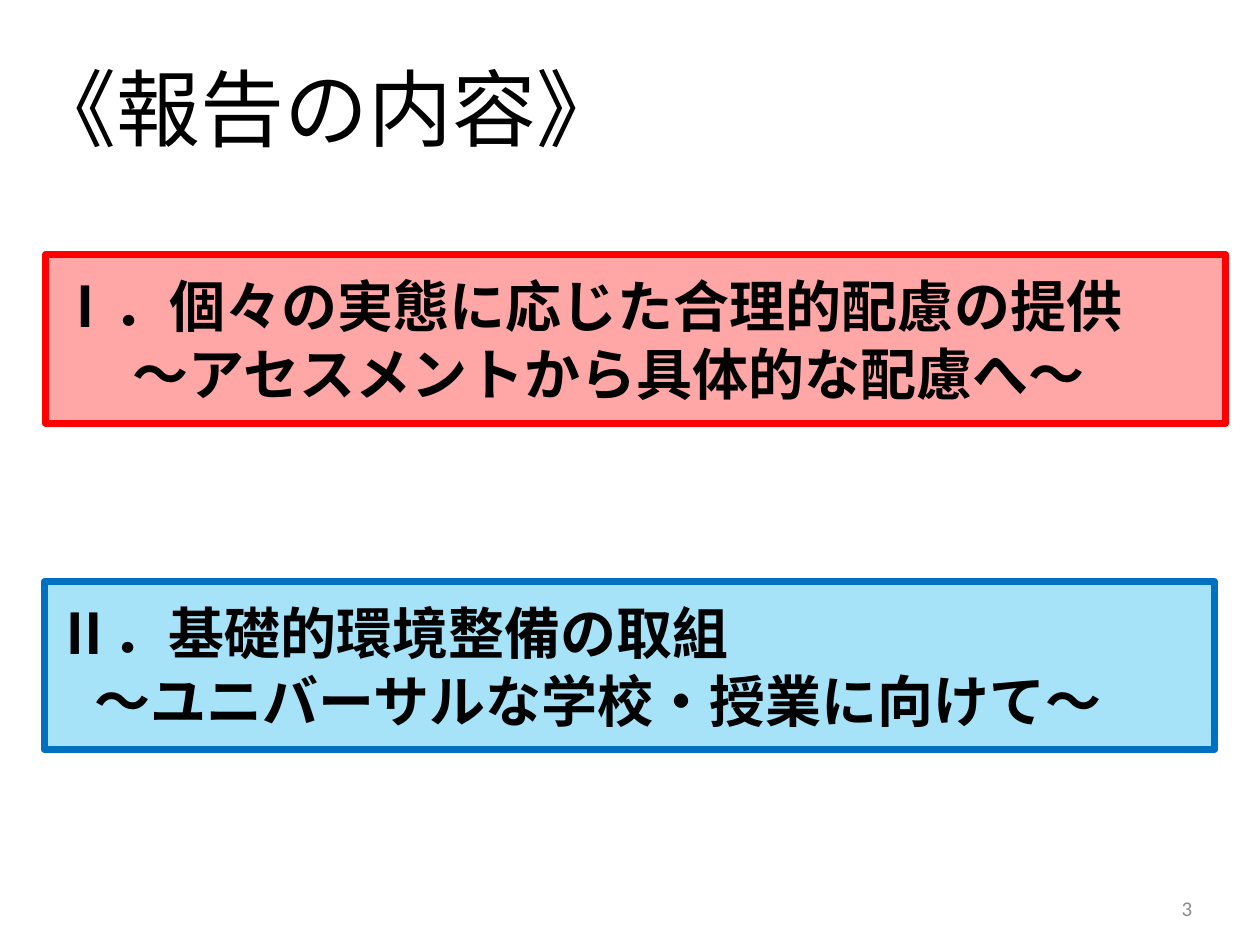
from dataclasses import dataclass

from lxml.etree import SubElement
from pptx import Presentation
from pptx.dml.color import RGBColor
from pptx.enum.shapes import MSO_SHAPE as Preset
from pptx.enum.text import MSO_ANCHOR as Anchor, PP_ALIGN as Align
from pptx.oxml.ns import qn
from pptx.util import Pt

COLORS = {
    "text": "000000",
    "number": "8C8C8C",
    "red": "FF0000",
    "sky": "00B0F0",
    "blue": "0070C0",
}
JAPANESE_FONT = "Noto Sans CJK JP"
LINE_HEIGHT = 1.215


@dataclass(frozen=True)
class Topic:
    heading: str
    subtitle: str
    subtitle_indent: float
    left: float
    top: float
    width: float
    height: float
    fill: str
    line: str


TOPICS = [
    Topic("Ⅱ．基礎的環境整備の取組", "～ユニバーサルな学校・授業に向けて～",
          21.5, 25.2, 332.6, 668.9, 95.8, "sky", "blue"),
    Topic("Ⅰ．個々の実態に応じた合理的配慮の提供", "～アセスメントから具体的な配慮へ～",
          43, 25.9, 145.4, 674.6, 96.5, "red", "red"),
]


def color(name: str) -> RGBColor:
    return RGBColor.from_string(COLORS[name])


def place(shape, left: float, top: float, width: float, height: float) -> None:
    shape.left, shape.top = Pt(left), Pt(top)
    shape.width, shape.height = Pt(width), Pt(height)


def format_japanese(paragraph, size: float, bold: bool = False) -> None:
    paragraph.alignment = Align.LEFT
    paragraph.line_spacing = Pt(round(size * LINE_HEIGHT, 1))
    font = paragraph.font
    font.name, font.size, font.bold = JAPANESE_FONT, Pt(size), bold
    font.color.rgb = color("text")
    for run in paragraph.runs:
        run.font.name = JAPANESE_FONT
        properties = run.font._element
        SubElement(properties, qn("a:ea"), typeface=JAPANESE_FONT)


def set_opacity(shape, percent: int) -> None:
    fill_color = shape._element.spPr.find(qn("a:solidFill"))[0]
    SubElement(fill_color, qn("a:alpha"), val=str(percent * 1000))


def add_title(slide, text: str) -> None:
    title = slide.shapes.title
    place(title, 11.5, 28.1, 365.8, 65.5)
    frame = title.text_frame
    frame.text = text
    frame.word_wrap = False
    frame.vertical_anchor = Anchor.MIDDLE
    format_japanese(frame.paragraphs[0], 48)


def add_topic(slide, topic: Topic) -> None:
    box = slide.shapes.add_shape(
        Preset.RECTANGLE, Pt(topic.left), Pt(topic.top),
        Pt(topic.width), Pt(topic.height))
    box.shadow.inherit = False
    box.fill.solid()
    box.fill.fore_color.rgb = color(topic.fill)
    set_opacity(box, 35)
    box.line.color.rgb = color(topic.line)
    box.line.width = Pt(4)
    frame = box.text_frame
    frame.text = f"{topic.heading}\n{topic.subtitle}"
    frame.word_wrap = True
    frame.vertical_anchor = Anchor.MIDDLE
    for paragraph in frame.paragraphs:
        format_japanese(paragraph, 32, bold=True)
    subtitle_properties = frame.paragraphs[1]._p.get_or_add_pPr()
    subtitle_properties.set("marL", str(Pt(topic.subtitle_indent)))


def add_slide_number(slide, number: str) -> None:
    box = slide.shapes.add_textbox(Pt(506.2), Pt(504.7), Pt(182.2), Pt(28.8))
    frame = box.text_frame
    frame.text = number
    frame.word_wrap = True
    frame.vertical_anchor = Anchor.MIDDLE
    paragraph = frame.paragraphs[0]
    paragraph.alignment = Align.RIGHT
    paragraph.font.name, paragraph.font.size = "Calibri", Pt(12)
    paragraph.font.color.rgb = color("number")


def main() -> None:
    presentation = Presentation()
    presentation.slide_width, presentation.slide_height = Pt(720), Pt(540)
    title_only = presentation.slide_layouts[5]
    slide = presentation.slides.add_slide(title_only)
    add_title(slide, "《報告の内容》")
    for topic in TOPICS:
        add_topic(slide, topic)
    add_slide_number(slide, "3")
    presentation.save("out.pptx")


if __name__ == "__main__":
    main()
